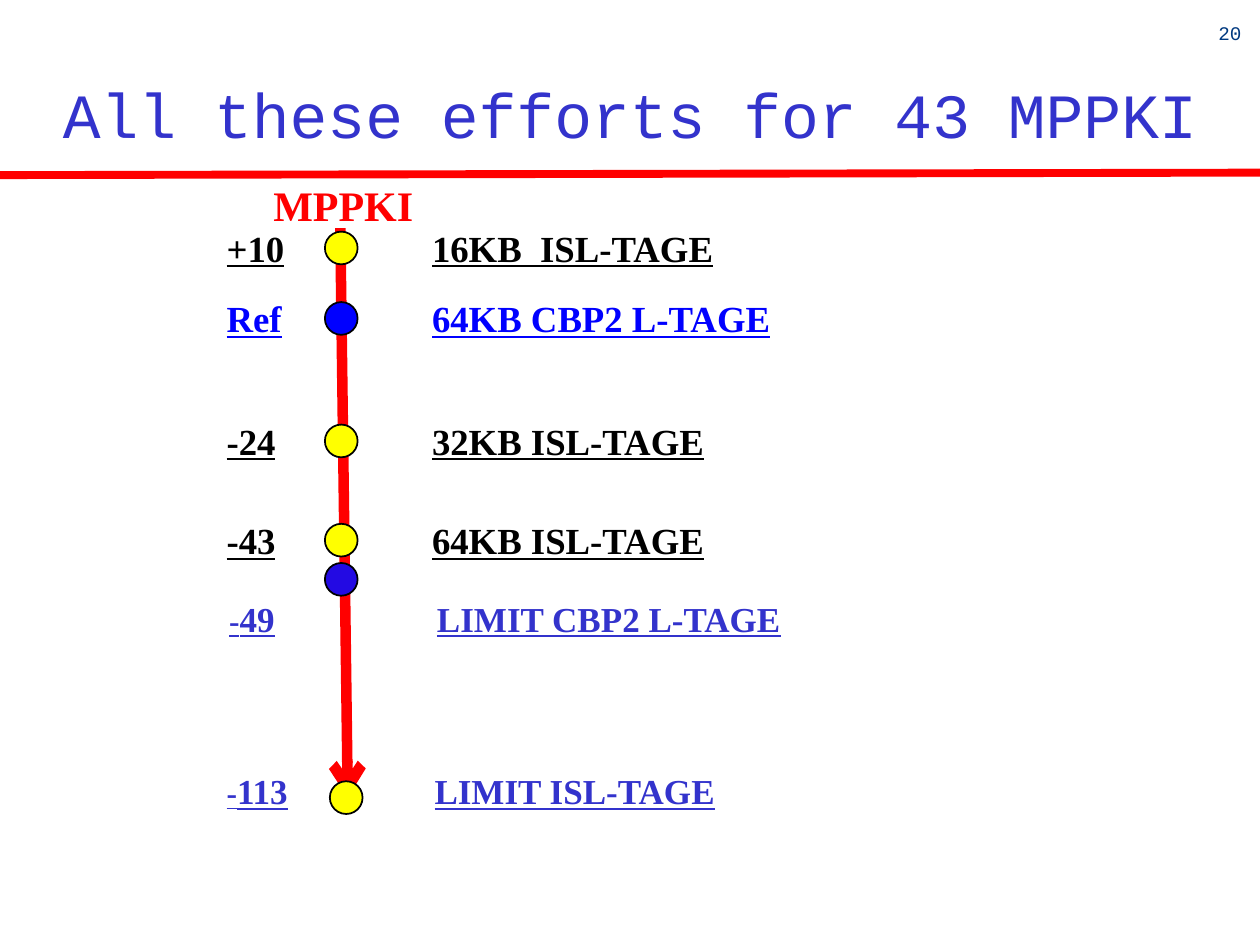
import dataclasses

import lxml.etree
import pptx
import pptx.dml.color
import pptx.enum.shapes
import pptx.enum.text
import pptx.oxml.ns
import pptx.util

Cm = pptx.util.Cm
Pt = pptx.util.Pt


@dataclasses.dataclass(frozen=True)
class Theme:
    """Hold the colours, fonts and type sizes of the slide."""
    red: str = "FF0000"
    black: str = "000000"
    blue: str = "0000FF"
    navy: str = "003980"
    indigo: str = "3333CC"
    violet: str = "230AE3"
    yellow: str = "FFFF00"
    mono: str = "Courier New"
    serif: str = "Times New Roman"
    title: int = 36
    head: int = 24
    row: int = 21
    limit: int = 20
    minus: int = 18
    page: int = 11


THEME = Theme()


def tint(hue):
    """Turn a hex string into a colour."""
    return pptx.dml.color.RGBColor.from_string(hue)


def style(item, values):
    """Set each named value on an object."""
    for name, value in values.items():
        setattr(item, name, value)


def write(shapes, box, runs, hue, font, inset=(0.25, 0.13), **look):
    """Place a text box with runs of (text, size) and return its paragraph."""
    frame = shapes.add_textbox(*map(Cm, box)).text_frame
    side, edge = map(Cm, inset)
    style(frame, {"word_wrap": True, "margin_left": side, "margin_right": side,
                  "margin_top": edge, "margin_bottom": edge})
    para = frame.paragraphs[0]
    for text, size in runs:
        run = para.add_run()
        run.text = text
        style(run.font, {"name": font, "size": Pt(size), **look})
        run.font.color.rgb = tint(hue)
    return para


def draw_line(shapes, ends, width, arrow=False):
    """Draw a red line, with an arrowhead at its end if asked."""
    line = shapes.add_connector(
        pptx.enum.shapes.MSO_CONNECTOR.STRAIGHT, *map(Cm, ends))
    line.line.width = Pt(width)
    line.line.color.rgb = tint(THEME.red)
    props = line._element.spPr
    qn = pptx.oxml.ns.qn
    if arrow:
        lxml.etree.SubElement(props.find(qn("a:ln")), qn("a:tailEnd"), type="arrow")
    lxml.etree.SubElement(props, qn("a:effectLst"))


def draw_dot(shapes, left, top, hue):
    """Draw a round marker with a black outline."""
    dot = shapes.add_shape(pptx.enum.shapes.MSO_SHAPE.OVAL,
                           Cm(left), Cm(top), Cm(0.66), Cm(0.66))
    dot.shadow.inherit = False
    dot.fill.solid()
    dot.fill.fore_color.rgb = tint(hue)
    dot.line.color.rgb = tint(THEME.black)
    dot.line.width = Pt(1)


def add_head(shapes, left, top, width, height):
    """Place the page number, rule and title."""
    write(shapes, (left + width - 0.84, top + 0.43, 0.51, 0.64),
          [("20", THEME.page)], THEME.navy, THEME.mono, inset=(0, 0))
    draw_line(shapes, (left, top + height + 0.35,
                       left + width, top + height + 0.3), 4.5)
    para = write(shapes, (left, top, width, height),
                 [("All these efforts for 43 MPPKI", THEME.title)],
                 THEME.indigo, THEME.mono)
    style(para, {"alignment": pptx.enum.text.PP_ALIGN.CENTER,
                 "line_spacing": 1.12})
    para._parent.vertical_anchor = pptx.enum.text.MSO_ANCHOR.BOTTOM


def add_row(shapes, left, top, runs, label, hue, size, fill, shift):
    """Place one group of value, marker and label."""
    group = shapes.add_group_shape().shapes
    across, down = shift
    draw_dot(group, left + 2.23 + across, top + down, fill)
    gap = 0.05 if size == THEME.limit else 0
    look = {"bold": True, "underline": True}
    write(group, (left, top, 2.24, 1.14), runs, hue, THEME.serif, **look)
    write(group, (left + 4.14 + gap, top, 8.5, 1.14), [(label, size)],
          hue, THEME.serif, **look)


def add_scale(shapes, left, top):
    """Place the arrow, its heading and the rows along it."""
    t = THEME
    draw_line(shapes, (left + 2.54, top + 1.12, left + 2.69, top + 12.6), 6, True)
    for down, text, label, hue, fill in (
            (0.94, "+10", "16KB  ISL-TAGE", t.black, t.yellow),
            (2.36, "Ref", "64KB CBP2 L-TAGE", t.blue, t.blue),
            (4.83, "-24", "32KB ISL-TAGE", t.black, t.yellow),
            (6.83, "-43", "64KB ISL-TAGE", t.black, t.yellow)):
        add_row(shapes, left, top + down, [(text, t.row)], label, hue,
                t.row, fill, (0, 0.25))
    for side, down, text, label, fill, shift in (
            (0, 11.91, "113", "LIMIT ISL-TAGE", t.yellow, (0.1, 0.36)),
            (0.05, 8.43, "49", "LIMIT CBP2 L-TAGE", t.violet, (-0.05, -0.56))):
        add_row(shapes, left + side, top + down,
                [("-", t.minus), (text, t.limit)], label, t.indigo,
                t.limit, fill, shift)
    write(shapes, (left + 0.94, top, 3.35, 1.27), [("MPPKI", t.head)],
          t.red, t.serif, bold=True)


def main():
    """Build the slide and save it."""
    deck = pptx.Presentation()
    style(deck, {"slide_width": Cm(25.4), "slide_height": Cm(19.05)})
    shapes = deck.slides.add_slide(deck.slide_layouts[6]).shapes
    add_head(shapes, 0, 0, 25.4, 3.18)
    add_scale(shapes, 4.32, 3.48)
    deck.save("out.pptx")


if __name__ == "__main__":
    main()
